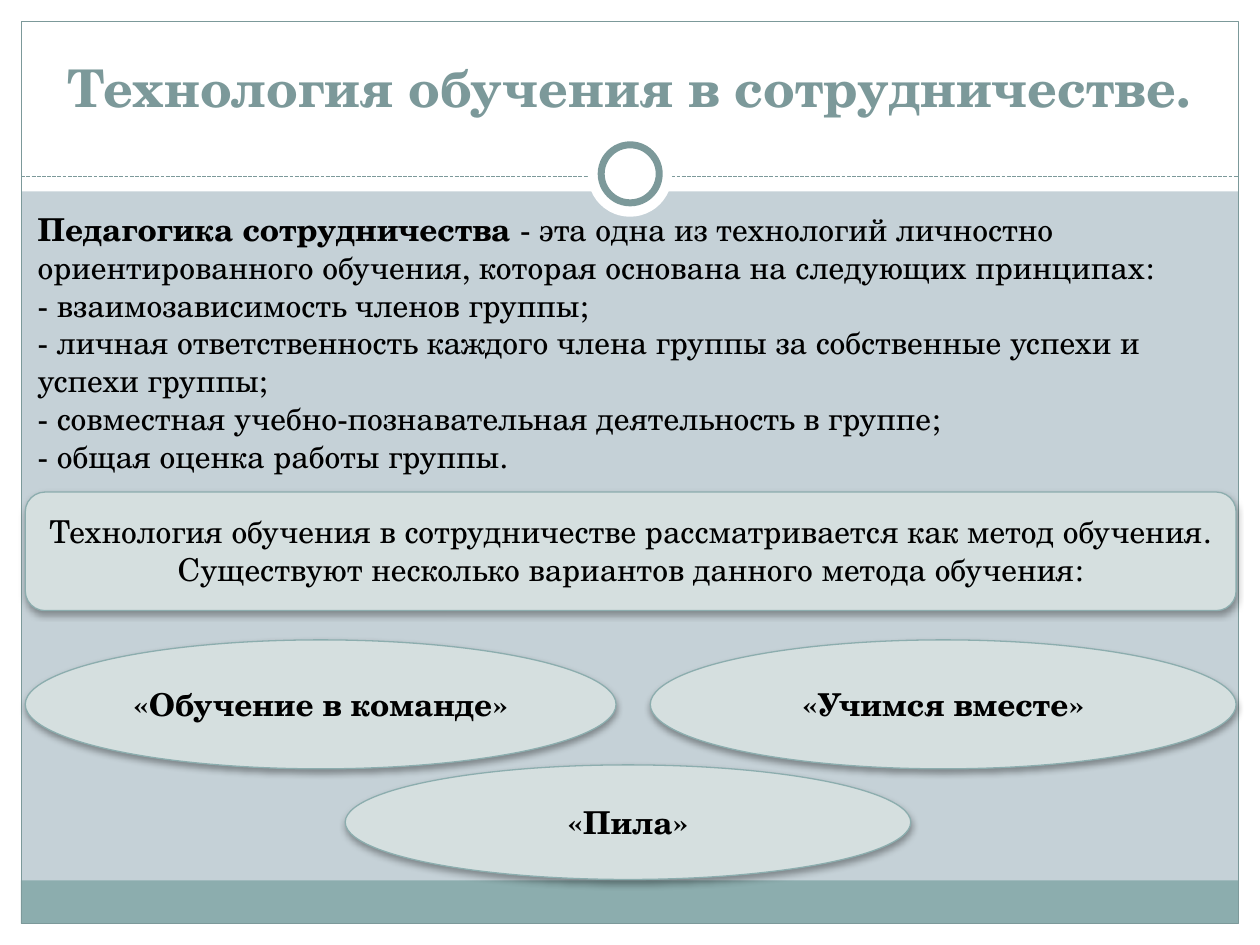
"""Builds the slide on cooperative learning technology."""
import pptx
import pptx.dml.color
import pptx.enum.dml
import pptx.enum.shapes
import pptx.enum.text
import pptx.oxml
import pptx.oxml.ns
import pptx.util
from pptx.util import Cm

KIND = pptx.enum.shapes.MSO_SHAPE
ALIGN = pptx.enum.text.PP_ALIGN
ANCHOR = pptx.enum.text.MSO_ANCHOR
FONT = "TeX Gyre Schola"
COLOURS = {
    "page": "C5D1D7",
    "white": "FFFFFF",
    "band": "8CADAE",
    "accent": "7C999A",
    "card": "D5DFDF",
    "text": "000000",
}
NAMESPACE = pptx.oxml.ns.nsdecls("a")
SHADOW = (
    f'<a:effectLst {NAMESPACE}><a:outerShdw blurRad="50800" dist="25400" dir="5400000" '
    'rotWithShape="0"><a:srgbClr val="000000"><a:alpha val="35000"/></a:srgbClr>'
    "</a:outerShdw></a:effectLst>"
)
NO_EFFECT = f"<a:effectLst {NAMESPACE}/>"


class Painter:
    def __init__(self, page):
        self.page = page

    def colour(self, name):
        return pptx.dml.color.RGBColor.from_string(COLOURS[name])

    def background(self, name):
        fill = self.page.background.fill
        fill.solid()
        fill.fore_color.rgb = self.colour(name)

    def shape(self, kind, place, fill=None, line=None, width=0.75):
        shape = self.page.shapes.add_shape(kind, *map(Cm, place))
        shape.shadow.inherit = False
        if fill:
            shape.fill.solid()
            shape.fill.fore_color.rgb = self.colour(fill)
        else:
            shape.fill.background()
        if line:
            shape.line.color.rgb = self.colour(line)
            shape.line.width = pptx.util.Pt(width)
        else:
            shape.line.fill.background()
        return shape

    def card(self, kind, place, label=None):
        card = self.shape(kind, place, "card", "band")
        properties = card.element.spPr
        properties.remove(properties.find(pptx.oxml.ns.qn("a:effectLst")))
        properties.append(pptx.oxml.parse_xml(SHADOW))
        if label:
            frame = card.text_frame
            frame.word_wrap = True
            frame.vertical_anchor = ANCHOR.MIDDLE
            self.para(frame.paragraphs[0], [(label, True)], ALIGN.CENTER)

    def dashed_line(self, left, right, top):
        straight = pptx.enum.shapes.MSO_CONNECTOR.STRAIGHT
        line = self.page.shapes.add_connector(straight, Cm(left), Cm(top), Cm(right), Cm(top))
        line.line.color.rgb = self.colour("accent")
        line.line.width = pptx.util.Pt(0.75)
        line.line.dash_style = pptx.enum.dml.MSO_LINE.SQUARE_DOT
        line.element.spPr.append(pptx.oxml.parse_xml(NO_EFFECT))

    def text_box(self, place):
        frame = self.page.shapes.add_textbox(*map(Cm, place)).text_frame
        frame.word_wrap = True
        return frame

    def para(self, para, spans, align=ALIGN.LEFT, size=18, colour="text"):
        para.alignment = align
        for text, bold in spans:
            span = para.add_run()
            span.text = text
            span.font.name = FONT
            span.font.size = pptx.util.Pt(size)
            span.font.bold = bold
            span.font.color.rgb = self.colour(colour)

    def title(self, place, text):
        frame = self.text_box(place)
        frame.margin_top = frame.margin_bottom = 0
        frame.vertical_anchor = ANCHOR.MIDDLE
        self.para(frame.paragraphs[0], [(text, True)], ALIGN.CENTER, 29.7, "accent")

    def body(self, place, intro, principles, summary):
        frame = self.text_box(place)
        frame.auto_size = pptx.enum.text.MSO_AUTO_SIZE.SHAPE_TO_FIT_TEXT
        self.para(frame.paragraphs[0], intro)
        for principle in principles:
            self.para(frame.add_paragraph(), [(f"- {principle}", False)])
        closing = frame.add_paragraph()
        closing.space_before = pptx.util.Pt(21.6)
        self.para(closing, [(summary, False)], ALIGN.CENTER)


def main():
    deck = pptx.Presentation()
    deck.slide_width, deck.slide_height = Cm(25.4), Cm(19.05)
    painter = Painter(deck.slides.add_slide(deck.slide_layouts[6]))
    painter.background("page")

    margins = [
        (0, 18.62, 25.4, 0.43),
        (0, 0, 25.4, 3.86),
        (0, 0, 0.43, 19.05),
        (24.97, 0, 0.43, 19.05),
    ]
    for place in margins:
        painter.shape(KIND.RECTANGLE, place, "white")
    painter.shape(KIND.RECTANGLE, (0.42, 17.75, 24.54, 0.87), "band")
    painter.shape(KIND.RECTANGLE, (0.43, 0.43, 24.54, 18.19), line="accent")
    painter.dashed_line(0.43, 24.97, 3.56)
    painter.shape(KIND.OVAL, (11.85, 2.67, 1.7, 1.7), "white")
    painter.shape(KIND.OVAL, (12.12, 2.92, 1.17, 1.17), "white", "accent", 4)

    painter.card(KIND.ROUNDED_RECTANGLE, (0.51, 9.92, 24.41, 2.39))
    painter.title((0.84, 1.12, 23.7, 1.27), "Технология обучения в сотрудничестве.")
    painter.body(
        (0.51, 4.11, 24.41, 8.71),
        [
            ("Педагогика сотрудничества ", True),
            ("- эта одна из технологий личностно ориентированного обучения, "
             "которая основана на следующих принципах:", False),
        ],
        [
            "взаимозависимость членов группы;",
            "личная ответственность каждого члена группы за собственные успехи и успехи группы;",
            "совместная учебно-познавательная деятельность в группе;",
            "общая оценка работы группы.",
        ],
        "Технология обучения в сотрудничестве рассматривается как метод обучения. "
        "Существуют несколько вариантов данного метода обучения:",
    )
    methods = [
        ("«Обучение в команде»", (0.51, 12.9, 11.91, 2.6)),
        ("«Учимся вместе»", (13.11, 12.9, 11.81, 2.6)),
        ("«Пила»", (6.96, 15.42, 11.4, 2.31)),
    ]
    for label, place in methods:
        painter.card(KIND.OVAL, place, label)
    deck.save("out.pptx")


if __name__ == "__main__":
    main()
